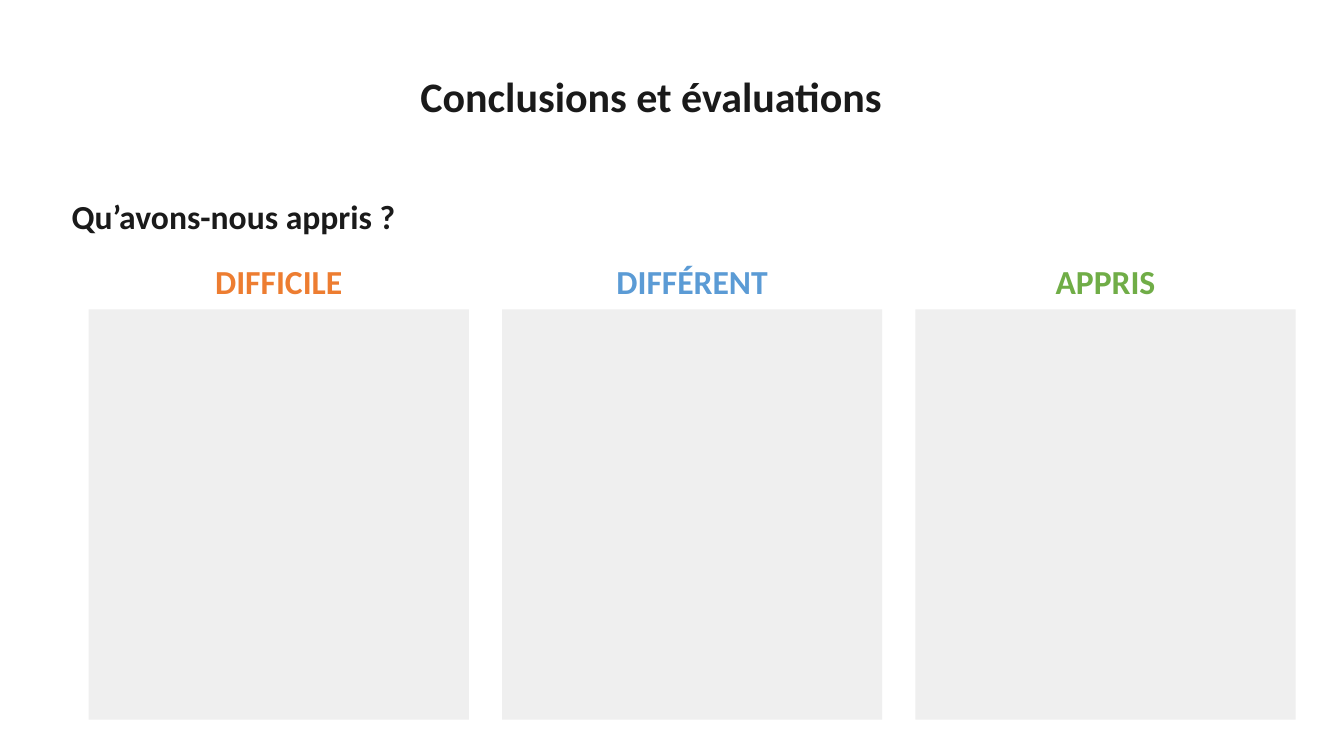
"""Build the closing slide: a title, a question and three headed panels."""
from lxml.etree import SubElement
from pptx import Presentation
from pptx.dml.color import RGBColor
from pptx.enum.shapes import MSO_SHAPE
from pptx.enum.text import MSO_ANCHOR, MSO_AUTO_SIZE, PP_ALIGN
from pptx.oxml.ns import qn
from pptx.util import Inches, Pt

COLORS = {
    "ink": "1A1A1A",
    "panel": "EFEFEF",
    "orange": "ED7D31",
    "blue": "5B9BD5",
    "green": "70AD47",
}
HEADINGS = [("DIFFICILE", "orange"), ("DIFFÉRENT", "blue"), ("APPRIS", "green")]
COLUMN_LEFT, COLUMN_STEP, COLUMN_WIDTH = 0.88, 4.1, 3.77
HEADING_TOP, PANEL_TOP, PANEL_HEIGHT = 2.58, 3.07, 4.07
HEADING_OVERHANG = 0.1


def place(box, left, top, width, height):
    box.left, box.top = Inches(left), Inches(top)
    box.width, box.height = Inches(width), Inches(height)


def fill_placeholder(box, area, text, size, color, align, anchor=MSO_ANCHOR.TOP):
    place(box, *area)
    frame = box.text_frame
    frame.word_wrap = True
    frame.auto_size = MSO_AUTO_SIZE.NONE
    frame.vertical_anchor = anchor
    frame.text = text
    para = frame.paragraphs[0]
    para.alignment = align
    para.line_spacing = 0.9
    para.space_before = Pt(0)
    properties = para._p.get_or_add_pPr()
    properties.set("marL", "0")
    properties.set("indent", "0")
    SubElement(properties, qn("a:buNone"))
    para.font.name = "Calibri"
    para.font.size = Pt(size)
    para.font.bold = True
    para.font.color.rgb = RGBColor.from_string(COLORS[color])


def add_panel(page, left):
    area = (left, PANEL_TOP, COLUMN_WIDTH, PANEL_HEIGHT)
    panel = page.shapes.add_shape(MSO_SHAPE.RECTANGLE, *map(Inches, area))
    panel.shadow.inherit = False
    panel.fill.solid()
    panel.fill.fore_color.rgb = RGBColor.from_string(COLORS["panel"])
    panel.line.fill.background()


def main():
    deck = Presentation()
    deck.slide_width, deck.slide_height = Inches(13.33), Inches(7.5)
    page = deck.slides.add_slide(deck.slide_layouts.get_by_name("Comparison"))
    title, question, *heading_boxes = page.placeholders

    fill_placeholder(title, (2.07, 0.45, 8.78, 1.07), "Conclusions et évaluations",
                     30, "ink", PP_ALIGN.CENTER, MSO_ANCHOR.MIDDLE)
    fill_placeholder(question, (0.61, 1.94, 5.48, 0.64), "Qu’avons-nous appris ?",
                     24, "ink", PP_ALIGN.LEFT)
    for column, (box, (text, color)) in enumerate(zip(heading_boxes, HEADINGS)):
        left = COLUMN_LEFT + column * COLUMN_STEP
        area = (left - HEADING_OVERHANG, HEADING_TOP,
                COLUMN_WIDTH + 2 * HEADING_OVERHANG, PANEL_TOP - HEADING_TOP)
        fill_placeholder(box, area, text, 24, color, PP_ALIGN.CENTER)
        add_panel(page, left)

    deck.save("out.pptx")


if __name__ == "__main__":
    main()
